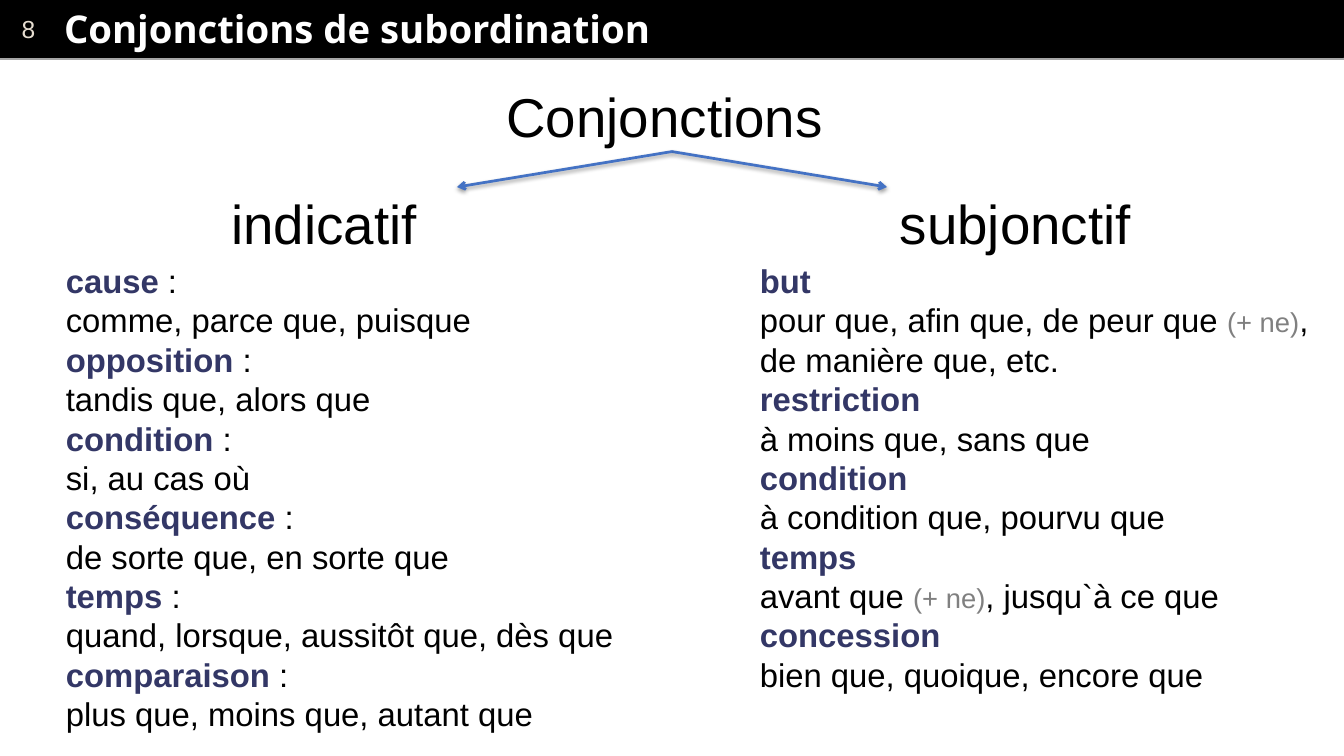
import pptx
import pptx.util
import pptx.dml.color
import pptx.enum.shapes
import pptx.enum.text
import pptx.oxml
import pptx.oxml.ns

RGBColor = pptx.dml.color.RGBColor
Align = pptx.enum.text.PP_ALIGN
Anchor = pptx.enum.text.MSO_ANCHOR
Inches = pptx.util.Inches
Pt = pptx.util.Pt

BLACK = RGBColor(0x00, 0x00, 0x00)
WHITE = RGBColor(0xFF, 0xFF, 0xFF)
SAND = RGBColor(0xE7, 0xDE, 0xD1)
RULE_GREY = RGBColor(0xA6, 0xA6, 0xA6)
NOTE_GREY = RGBColor(0x80, 0x80, 0x80)
TERM_BLUE = RGBColor(0x33, 0x37, 0x66)
ARROW_BLUE = RGBColor(0x44, 0x72, 0xC4)

# The slide is a grid of 100 columns by 100 rows.
WIDTH, HEIGHT = Inches(13.65), Inches(7.68)
COLUMN, ROW = WIDTH / 100, HEIGHT / 100

NE = "(+ ne)"
INDICATIF = [
    ("cause", " :", "comme, parce que, puisque"),
    ("opposition", " :", "tandis que, alors que"),
    ("condition", " :", "si, au cas où"),
    ("conséquence", " :", "de sorte que, en sorte que"),
    ("temps", " :", "quand, lorsque, aussitôt que, dès que"),
    ("comparaison", " :", "plus que, moins que, autant que"),
]
SUBJONCTIF = [
    ("but", "", "pour que, afin que, de peur que (+ ne), de manière que, etc."),
    ("restriction", "", "à moins que, sans que"),
    ("condition", "", "à condition que, pourvu que"),
    ("temps", "", "avant que (+ ne), jusqu`à ce que"),
    ("concession", "", "bien que, quoique, encore que"),
]


def on_grid(*lengths):
    """Turn alternating columns and rows into slide lengths."""
    return [round(length * (ROW if index % 2 else COLUMN))
            for index, length in enumerate(lengths)]


def style(span, size, color, bold=False, name="Arial"):
    span.font.size = Pt(size)
    span.font.name = name
    span.font.bold = bold
    span.font.color.rgb = color


def add_span(para, text, size, color, bold=False):
    if text:
        span = para.add_run()
        span.text = text
        style(span, size, color, bold)


def add_line(page, ends, color):
    line = page.shapes.add_connector(
        pptx.enum.shapes.MSO_CONNECTOR.STRAIGHT, *on_grid(*ends))
    line.line.color.rgb = color
    line.line.width = Pt(2)
    effects = pptx.oxml.parse_xml(
        f"<a:effectLst {pptx.oxml.ns.nsdecls('a')}/>")
    line.element.spPr.append(effects)
    return line, effects


def add_arrow(page, ends):
    line, effects = add_line(page, ends, ARROW_BLUE)
    namespace = pptx.oxml.ns.nsdecls("a")
    line.line._get_or_add_ln().append(pptx.oxml.parse_xml(
        f'<a:tailEnd {namespace} type="arrow"/>'))
    effects.append(pptx.oxml.parse_xml(
        f'<a:outerShdw {namespace} blurRad="{Pt(3.1)}" dist="{Pt(1.6)}" '
        'dir="5400000" rotWithShape="0"><a:srgbClr val="000000">'
        '<a:alpha val="38000"/></a:srgbClr></a:outerShdw>'))


def add_header(page, box, number, text):
    left, top, width, height = box
    bar = page.shapes.add_shape(
        pptx.enum.shapes.MSO_SHAPE.RECTANGLE, *on_grid(*box))
    bar.shadow.inherit = False
    bar.fill.solid()
    bar.fill.fore_color.rgb = BLACK
    bar.line.color.rgb = BLACK
    bar.line.width = Pt(0.75)
    frame = bar.text_frame
    frame.text = number
    frame.margin_left = Inches(0.22)
    frame.vertical_anchor = Anchor.MIDDLE
    frame.paragraphs[0].alignment = Align.LEFT
    style(frame.paragraphs[0].runs[0], 18, SAND)

    rule_top = top + height + 0.26
    rule, _ = add_line(page, (left, rule_top, left + width, rule_top), RULE_GREY)

    title = page.shapes.title
    rule.element.addnext(title.element)
    title.left, title.top, title.width, title.height = on_grid(
        left + 4.47, top + 0.13, width - 5.86, height - 0.26)
    frame = title.text_frame
    frame.text = text
    frame.auto_size = pptx.enum.text.MSO_AUTO_SIZE.NONE
    frame.vertical_anchor = Anchor.MIDDLE
    frame.margin_left = frame.margin_right = Inches(0.04)
    frame.margin_top = frame.margin_bottom = Inches(0.04)
    frame.paragraphs[0].alignment = Align.LEFT
    style(frame.paragraphs[0].runs[0], 28, WHITE, True, "Open Sans")


def add_text_frame(page, box):
    frame = page.shapes.add_textbox(*on_grid(*box)).text_frame
    frame.word_wrap = True
    return frame


def add_heading(page, box, text, alignment=Align.LEFT):
    para = add_text_frame(page, box).paragraphs[0]
    para.text = text
    para.alignment = alignment
    style(para.runs[0], 40, BLACK)


def add_mood(page, box, heading, indent, entries):
    """Place a mood's heading above its list of conjunctions."""
    left, top, width, height = box
    add_heading(page, (left + indent, top, 22, 10), heading)
    frame = add_text_frame(page, (left, top + 9.37, width, height - 9.37))
    for index, (term, mark, examples) in enumerate(entries):
        para = frame.add_paragraph() if index else frame.paragraphs[0]
        add_span(para, term, 24, TERM_BLUE, True)
        add_span(para, mark, 24, BLACK)
        para.add_line_break()
        before, note, after = examples.partition(NE)
        add_span(para, before, 24, BLACK)
        add_span(para, note, 20, NOTE_GREY)
        add_span(para, after, 24, BLACK)


def add_conjunctions(page):
    add_heading(page, (10, 10.29, 80, 10.29), "Conjonctions ", Align.CENTER)
    for end in (66, 34):
        add_arrow(page, (50, 20.05, end, 24.74))
    add_mood(page, (55.82, 24.48, 42.71, 68.48), "subjonctif", 10.41, SUBJONCTIF)
    add_mood(page, (4.18, 24.48, 42.71, 73.82), "indicatif", 12.3, INDICATIF)


def main():
    deck = pptx.Presentation()
    deck.slide_width, deck.slide_height = WIDTH, HEIGHT
    page = deck.slides.add_slide(deck.slide_layouts.get_by_name("Title Only"))
    add_header(page, (0, 0, 100, 7.55), "8", "Conjonctions de subordination")
    add_conjunctions(page)
    deck.save("out.pptx")


if __name__ == "__main__":
    main()
